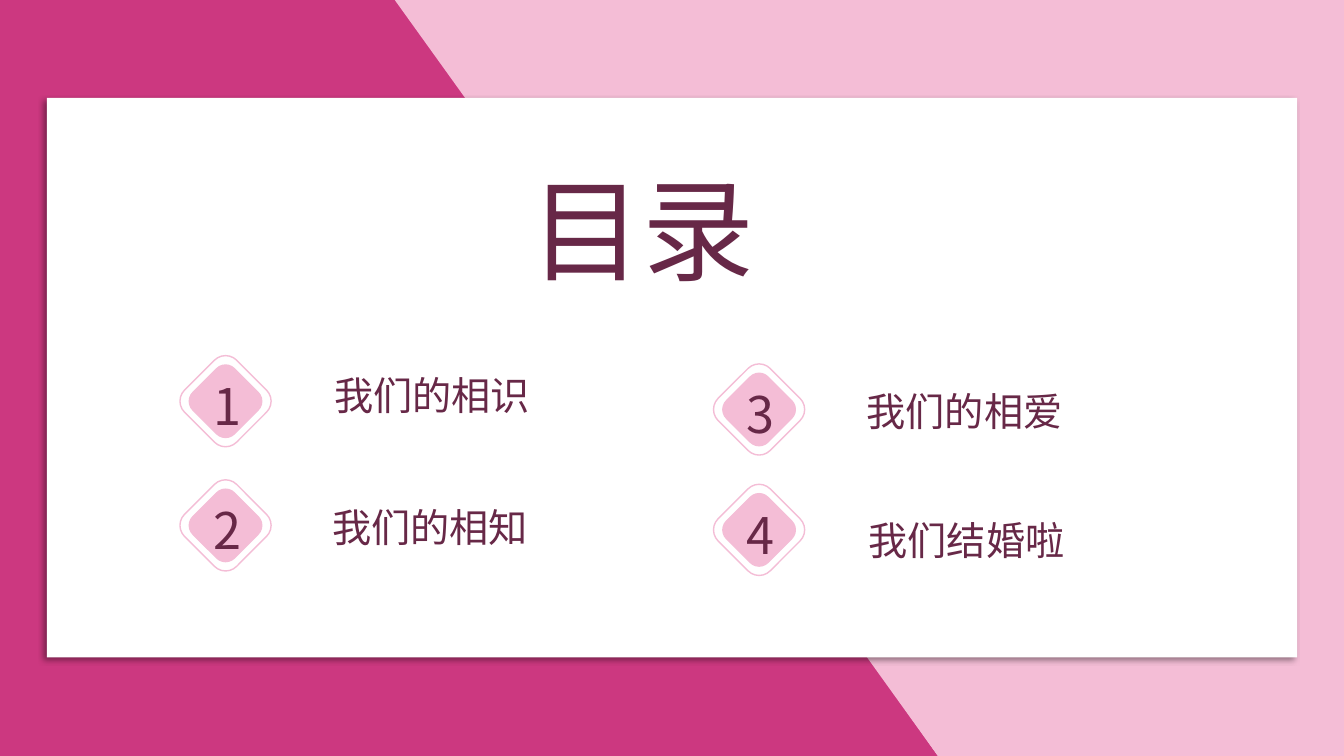
from lxml import etree
from pptx import Presentation
from pptx.dml import color
from pptx.enum import shapes, text
from pptx.oxml import ns
from pptx.util import Pt

WIDTH, HEIGHT = 960, 540
FONT = "Noto Sans CJK SC"
MAGENTA, PINK, PLUM, WHITE = "CC3880", "F4BDD6", "672847", "FFFFFF"

# number, badge centre x and y, label, label left and top
ENTRIES = [
    ("1", 161.1, 286.6, "我们的相识", 231.8, 261.4),
    ("2", 161.1, 375.3, "我们的相知", 230.4, 355.7),
    ("3", 542.2, 292.5, "我们的相爱", 612, 272.9),
    ("4", 542.2, 378.5, "我们结婚啦", 613.4, 365),
]


def rgb(value):
    return color.RGBColor.from_string(value)


def paint(shape, fill, line=None):
    shape.shadow.inherit = False
    shape.fill.solid()
    shape.fill.fore_color.rgb = rgb(fill)
    if line:
        shape.line.color.rgb = rgb(line)
        shape.line.width = Pt(1)
    else:
        shape.line.fill.background()


def write(box, words, size, align):
    frame = box.text_frame
    frame.word_wrap = True
    frame.auto_size = text.MSO_AUTO_SIZE.SHAPE_TO_FIT_TEXT
    frame.vertical_anchor = text.MSO_ANCHOR.TOP
    frame.text = words
    para = frame.paragraphs[0]
    para.alignment = align
    span = para.runs[0]
    span.font.size = Pt(size)
    span.font.name = FONT
    span.font.color.rgb = rgb(PLUM)
    east_asian = etree.SubElement(span.font._element, ns.qn("a:ea"))
    east_asian.set("typeface", FONT)


def add_text(page, left, top, width, height, words, size, align):
    box = page.shapes.add_textbox(Pt(left), Pt(top), Pt(width), Pt(height))
    write(box, words, size, align)


def add_background(page, width, height):
    """Two colour fields that meet along a slanted edge."""
    edge_top, edge_bottom = 281.5, 669.5
    fields = [
        (MAGENTA, [(0, 0), (edge_top + 6, 0), (edge_bottom, height), (0, height)]),
        (PINK, [(edge_top, 0), (width, 0), (width, height), (edge_bottom, height)]),
    ]
    for fill, points in fields:
        builder = page.shapes.build_freeform(*points[0], scale=Pt(1))
        builder.add_line_segments(points[1:])
        paint(builder.convert_to_shape(), fill)


def add_card(page, left, top, width, height):
    """White panel with a soft shadow to the lower left."""
    card = page.shapes.add_shape(
        shapes.MSO_SHAPE.RECTANGLE, Pt(left), Pt(top), Pt(width), Pt(height))
    paint(card, WHITE)
    effects = card._element.spPr.find(ns.qn("a:effectLst"))
    shadow = etree.SubElement(
        effects, ns.qn("a:outerShdw"), blurRad=str(Pt(4)), dist=str(Pt(3)),
        dir=str(135 * 60000), algn="tr", rotWithShape="0")
    tint = etree.SubElement(shadow, ns.qn("a:srgbClr"), val="000000")
    etree.SubElement(tint, ns.qn("a:alpha"), val="40000")


def add_title(page, left, top, width, height):
    title = page.shapes.title
    title.left, title.top = Pt(left), Pt(top)
    title.width, title.height = Pt(width), Pt(height)
    write(title, "目录", 80, text.PP_ALIGN.LEFT)
    # Bring the title in front of the card
    page.shapes._spTree.append(title._element)


def add_badge(page, x, y, number):
    """Two nested diamonds with a number, centred on x and y."""
    for side, fill in ((52.6, WHITE), (41.8, PINK)):
        diamond = page.shapes.add_shape(
            shapes.MSO_SHAPE.ROUNDED_RECTANGLE,
            Pt(x - side / 2), Pt(y - side / 2), Pt(side), Pt(side))
        diamond.adjustments[0] = 0.213
        diamond.rotation = 45
        paint(diamond, fill, PINK)
    add_text(page, x - 17.2, y - 22.3, 36.7, 51, number, 36, text.PP_ALIGN.CENTER)


def add_contents(page):
    for number, x, y, label, left, top in ENTRIES:
        add_badge(page, x, y, number)
        add_text(page, left, top, 211.7, 41, label, 28, text.PP_ALIGN.JUSTIFY)


def main():
    deck = Presentation()
    deck.slide_width, deck.slide_height = Pt(WIDTH), Pt(HEIGHT)
    page = deck.slides.add_slide(deck.slide_layouts[5])
    add_background(page, WIDTH, HEIGHT)
    add_card(page, 33.5, 70, 893, 399.6)
    add_contents(page)
    add_title(page, 371.5, 110.9, 188.6, 104.4)
    deck.save("out.pptx")


if __name__ == "__main__":
    main()
